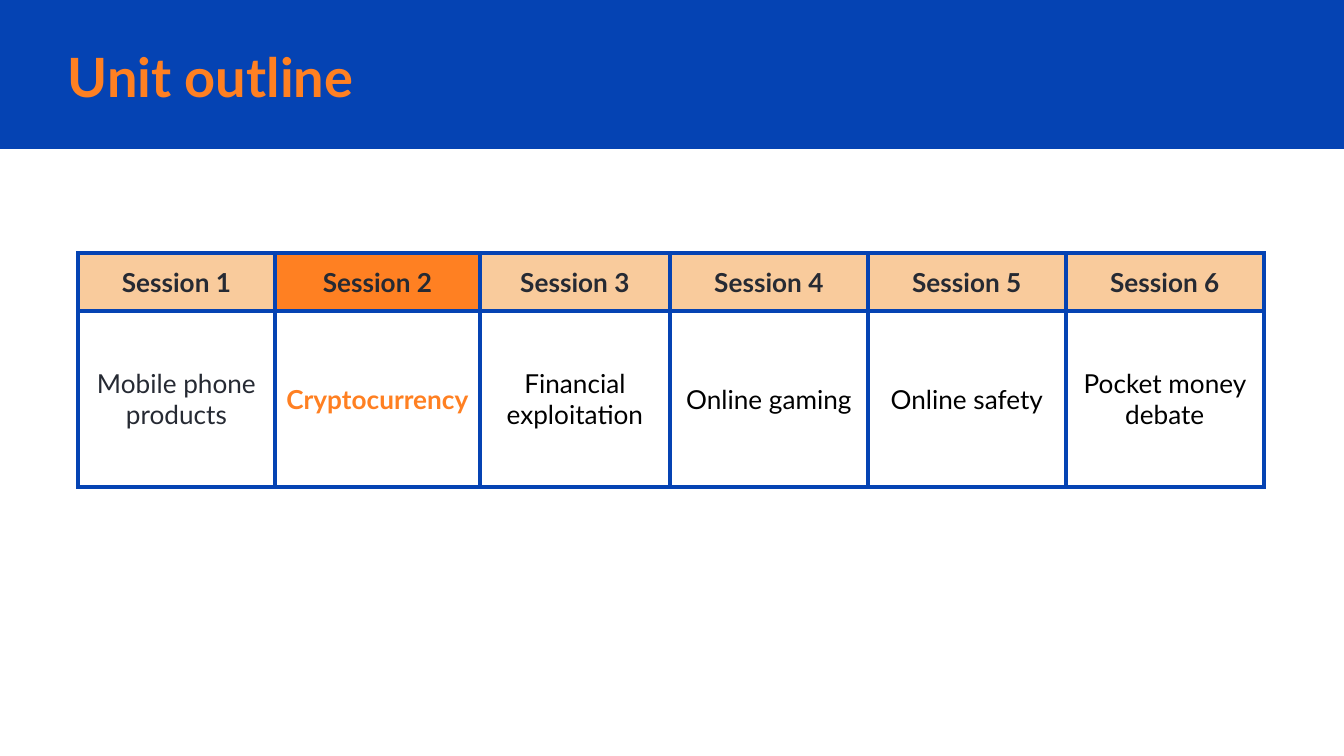
from dataclasses import dataclass

from lxml.etree import SubElement
from pptx import Presentation
from pptx.dml.color import RGBColor
from pptx.enum.shapes import MSO_SHAPE
from pptx.enum.text import MSO_ANCHOR, MSO_AUTO_SIZE, PP_ALIGN
from pptx.oxml.ns import qn
from pptx.slide import Slide
from pptx.table import _Cell as Cell
from pptx.text.text import _Paragraph as Para
from pptx.util import Emu, Pt

SCALE = 914400 / 134.4
FONT = "Lato"
COLORS = {
    "blue": "0543B3",
    "orange": "FF8022",
    "peach": "F9CB9C",
    "ink": "262A33",
    "black": "000000",
    "white": "FFFFFF",
}
HEAD, BODY = 58, 176
LEFT, TOP = 78, 253


@dataclass
class Session:
    topic: str
    width: int = 198
    fill: str = "peach"
    color: str = "black"
    bold: bool = False


SESSIONS = [
    Session("Mobile phone products", width=197, color="ink"),
    Session("Cryptocurrency", width=205, fill="orange", color="orange", bold=True),
    Session("Financial exploitation", width=190),
    Session("Online gaming"),
    Session("Online safety"),
    Session("Pocket money debate"),
]


def px(value: int) -> Emu:
    return Emu(round(value * SCALE))


def rgb(name: str) -> RGBColor:
    return RGBColor.from_string(COLORS[name])


def add_run(para: Para, text: str, size: int, color: str, bold: bool) -> None:
    run = para.add_run()
    run.text = text
    font = run.font
    font.name, font.size, font.bold = FONT, Pt(size), bold
    font.color.rgb = rgb(color)


def set_pad(box, pad: int) -> None:
    """Set equal margins on a text frame or a table cell."""
    box.margin_left = box.margin_right = px(pad)
    box.margin_top = box.margin_bottom = px(pad)
    box.vertical_anchor = MSO_ANCHOR.MIDDLE


def add_border(cell: Cell) -> None:
    props = cell._tc.get_or_add_tcPr()
    for side in ("lnL", "lnR", "lnT", "lnB"):
        line = SubElement(props, qn(f"a:{side}"), w=str(Pt(2.25)))
        fill = SubElement(line, qn("a:solidFill"))
        SubElement(fill, qn("a:srgbClr"), val=COLORS["blue"])


def fill_cell(cell: Cell, text: str, fill: str, color: str, bold: bool, pad: int) -> None:
    add_border(cell)
    cell.fill.solid()
    cell.fill.fore_color.rgb = rgb(fill)
    set_pad(cell, pad)
    para = cell.text_frame.paragraphs[0]
    para.alignment = PP_ALIGN.CENTER
    add_run(para, text, 14, color, bold)


def add_title(slide: Slide, text: str) -> None:
    """Draw the blue band and put the title on it."""
    band = slide.shapes.add_shape(MSO_SHAPE.RECTANGLE, 0, 0, px(1344), px(149))
    band.shadow.inherit = False
    band.fill.solid()
    band.fill.fore_color.rgb = rgb("blue")
    band.line.fill.background()

    title = slide.shapes.title
    title.element.addprevious(band.element)
    title.left, title.top = px(55), px(38)
    title.width, title.height = px(1137), px(75)
    frame = title.text_frame
    frame.word_wrap = True
    frame.auto_size = MSO_AUTO_SIZE.NONE
    set_pad(frame, 13)
    para = frame.paragraphs[0]
    para.alignment = PP_ALIGN.LEFT
    add_run(para, text, 29, "orange", True)


def add_outline(slide: Slide, sessions: list[Session]) -> None:
    width = sum(item.width for item in sessions)
    table = slide.shapes.add_table(
        2, len(sessions), px(LEFT), px(TOP), px(width), px(HEAD + BODY)
    ).table
    table.first_row = table.horz_banding = False
    table.rows[0].height, table.rows[1].height = px(HEAD), px(BODY)
    for col, item in enumerate(sessions):
        table.columns[col].width = px(item.width)
        fill_cell(table.cell(0, col), f"Session {col + 1}", item.fill, "ink", True, 13)
        fill_cell(table.cell(1, col), item.topic, "white", item.color, item.bold, 9)


def main() -> None:
    deck = Presentation()
    deck.slide_width, deck.slide_height = px(1344), px(756)
    slide = deck.slides.add_slide(deck.slide_layouts[5])
    add_title(slide, "Unit outline")
    add_outline(slide, SESSIONS)
    deck.save("out.pptx")


if __name__ == "__main__":
    main()
